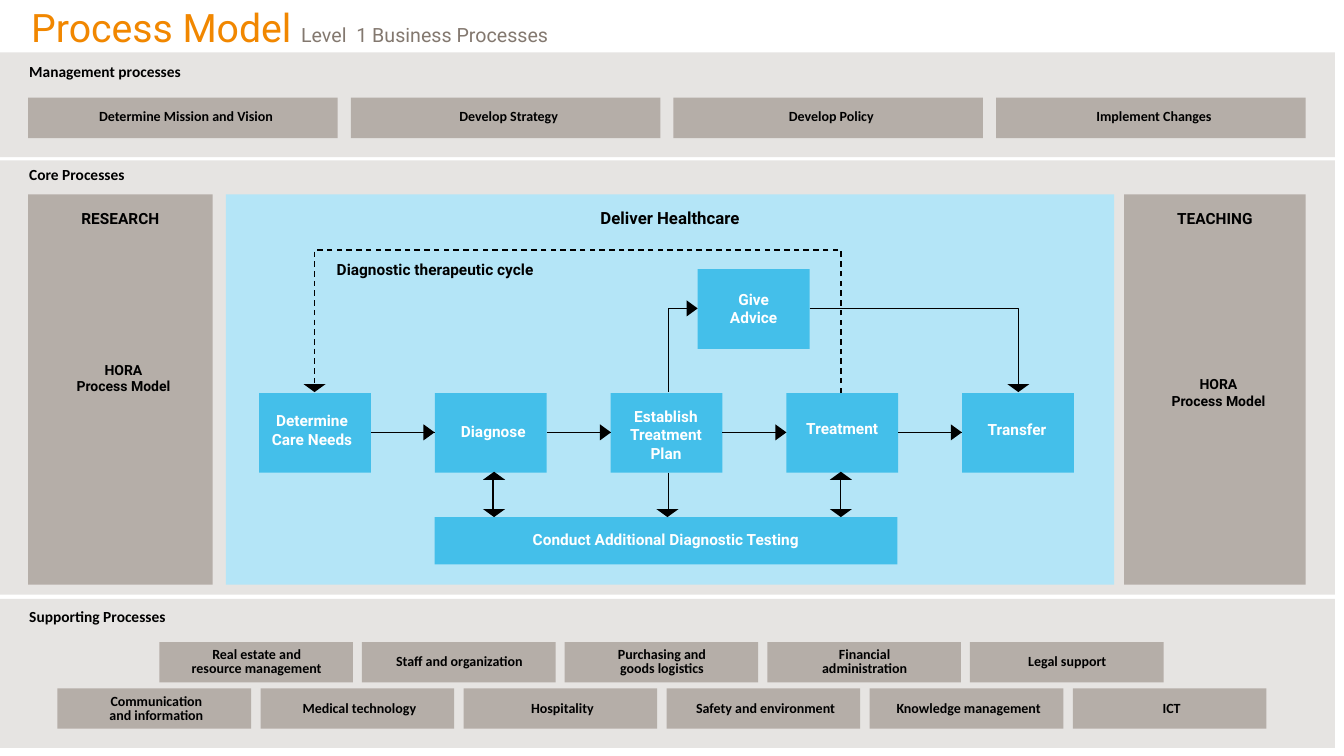
"""Build the Process Model slide: management, core and supporting processes."""
from pptx import Presentation, util as u
from pptx.dml.color import RGBColor
from pptx.enum import dml, shapes, text
from pptx.oxml.ns import qn
from lxml import etree

BLACK = RGBColor(0x00, 0x00, 0x00)
WHITE = RGBColor(0xFF, 0xFF, 0xFF)
ORANGE = RGBColor(0xF1, 0x87, 0x00)
BROWN = RGBColor(0x83, 0x78, 0x6F)
BAND = RGBColor(0xE6, 0xE4, 0xE2)
TAUPE = RGBColor(0xB5, 0xAE, 0xA8)
PALE_BLUE = RGBColor(0xB4, 0xE5, 0xF7)
BLUE = RGBColor(0x44, 0xBF, 0xEA)
LEFT, CENTER = text.PP_ALIGN.LEFT, text.PP_ALIGN.CENTER
TOP, MIDDLE = text.MSO_ANCHOR.TOP, text.MSO_ANCHOR.MIDDLE

deck = Presentation()
deck.slide_width, deck.slide_height = u.Inches(13.33), u.Inches(7.5)
page = deck.slides.add_slide(deck.slide_layouts[5])


def add_box(place, label, fill=None, font="Calibri", size=10, color=BLACK,
            spacing=u.Pt(10), align=CENTER, anchor=MIDDLE, inset=(0, 0)):
    lengths = [u.Inches(value) for value in place]
    if fill is None:
        box = page.shapes.add_textbox(*lengths)
    else:
        box = page.shapes.add_shape(shapes.MSO_SHAPE.RECTANGLE, *lengths)
        box.shadow.inherit = False
        box.fill.solid()
        box.fill.fore_color.rgb = fill
        box.line.fill.background()
    frame = box.text_frame
    frame.word_wrap = True
    frame.vertical_anchor = anchor
    frame.margin_left, frame.margin_top = (u.Inches(max(value, 0)) for value in inset)
    frame.margin_right, frame.margin_bottom = (u.Inches(max(-value, 0)) for value in inset)
    for index, line in enumerate(label.split("\n")):
        para = frame.add_paragraph() if index else frame.paragraphs[0]
        para.alignment = align
        para.line_spacing = spacing
        span = para.add_run()
        span.text = line
        span.font.name, span.font.size, span.font.bold = font, u.Pt(size), True
        span.font.color.rgb = color
    return box


def add_outline(points, closed, width=0.79):
    hundredths = [(round(x * 100), round(y * 100)) for x, y in points]
    builder = page.shapes.build_freeform(*hundredths[0], scale=u.Inches(0.01))
    builder.add_line_segments(hundredths[1:], close=closed)
    outline = builder.convert_to_shape()
    outline.shadow.inherit = False
    if closed:
        outline.fill.solid()
        outline.fill.fore_color.rgb = BLACK
        outline.line.fill.background()
    else:
        outline.fill.background()
        outline.line.color.rgb = BLACK
        outline.line.width = u.Pt(width)
    return outline


title = page.shapes.title
title.left, title.top = u.Inches(0.31), u.Inches(0.05)
title.width, title.height = u.Inches(7.05), u.Inches(0.46)
frame = title.text_frame
frame.auto_size = text.MSO_AUTO_SIZE.NONE
frame.word_wrap = True
frame.vertical_anchor = TOP
frame.margin_left = frame.margin_right = frame.margin_bottom = 0
frame.margin_top = u.Inches(0.02)
para = frame.paragraphs[0]
para.alignment, para.line_spacing = LEFT, 0.93
for words, size, color in [("Process Model ", 28, ORANGE), ("Level", 14, BROWN),
                           (" ", 28, ORANGE), ("1 Business Processes", 14, BROWN)]:
    span = para.add_run()
    span.text = words
    span.font.name, span.font.size = "Roboto", u.Pt(size)
    span.font.color.rgb = color

for top, height, label, drop in [(0.52, 1.04, "Management processes", 0.14),
                                 (1.59, 4.31, "Core Processes", 0.09),
                                 (5.94, 1.48, "Supporting Processes", 0.13)]:
    add_box((0, top, 13.24, height), label, BAND, size=11, align=LEFT,
            anchor=TOP, inset=(0.29, drop))

process_rows = [
    (0.28, 0.97, 3.07, 3.2, (0.06, -0.02),
     ["Determine Mission and Vision", "Develop Strategy", "Develop Policy",
      "Implement Changes"]),
    (1.58, 6.37, 1.92, 2.01, (0.01, 0),
     ["Real estate and\nresource management", "Staff and organization",
      "Purchasing and\ngoods logistics", "Financial\nadministration", "Legal support"]),
    (0.57, 6.83, 1.92, 2.014, (0.04, 0.02),
     ["Communication\nand information", "Medical technology", "Hospitality",
      "Safety and environment", "Knowledge management", "ICT"]),
]
for left, top, width, pitch, inset, labels in process_rows:
    for column, label in enumerate(labels):
        add_box((left + column * pitch, top, width, 0.4), label, TAUPE, inset=inset)

for left, width, label, fill, size in [(0.28, 1.83, "RESEARCH", TAUPE, 11),
                                       (2.24, 8.81, "Deliver Healthcare", PALE_BLUE, 12),
                                       (11.15, 1.8, "TEACHING", TAUPE, 11)]:
    add_box((left, 1.93, width, 3.87), label, fill, "Roboto", size,
            anchor=TOP, inset=(0, 0.19))
for left, top in [(0.36, 3.53), (11.22, 3.67)]:
    add_box((left, top, 1.73, 0.44), "HORA\nProcess Model", font="Roboto", spacing=1.0)
add_box((3.34, 2.53, 3.6, 0.28), "Diagnostic therapeutic cycle", font="Roboto",
        size=11, spacing=u.Pt(13), align=LEFT)

step_places = [(2.57 + 1.743 * column, 3.9, 1.11, 0.79) for column in range(5)]
step_labels = [("Determine\nCare Needs", (-0.06, -0.06)), ("Diagnose", (0.05, -0.02)),
               ("Establish\nTreatment\nPlan", (-0.01, 0.04)),
               ("Treatment", (0, -0.08)), ("Transfer", (-0.02, -0.06))]
places = step_places + [(6.92, 2.67, 1.11, 0.79), (4.31, 5.13, 4.59, 0.47)]
labels = step_labels + [("Give\nAdvice", (0, -0.01)),
                        ("Conduct Additional Diagnostic Testing", (0, -0.02))]
boxes = [add_box(place, label, BLUE, "Roboto", 11, WHITE, u.Pt(13), inset=inset)
         for place, (label, inset) in zip(places, labels)]
steps = boxes[:5]

connectors = []
for before, after in zip(steps, steps[1:]):
    connector = page.shapes.add_connector(shapes.MSO_CONNECTOR.STRAIGHT, 0, 0, 0, 0)
    connector.begin_connect(before, 3)
    connector.end_connect(after, 1)
    connectors.append(connector)
for x in (4.89, 6.63, 8.34):
    connectors.append(page.shapes.add_connector(
        shapes.MSO_CONNECTOR.STRAIGHT, u.Inches(x), u.Inches(4.69),
        u.Inches(x), u.Inches(5.09)))
for connector in connectors:
    connector.line.color.rgb = BLACK
    connector.line.width = u.Pt(0.79)
    etree.SubElement(connector._element.spPr, qn("a:effectLst"))

add_outline([(6.63, 3.89), (6.63, 3.06), (6.83, 3.06)], False)
add_outline([(8.03, 3.06), (10.1, 3.06), (10.1, 3.85)], False)
cycle = add_outline([(8.34, 3.9), (8.34, 2.48), (3.12, 2.48), (3.12, 3.88)], False, 1)
cycle.line.dash_style = dml.MSO_LINE.DASH

right_tips = [(place[0], 4.29) for place in step_places[1:]] + [(6.92, 3.06)]
for x, y in right_tips:
    add_outline([(x, y), (x - 0.11, y - 0.08), (x - 0.11, y + 0.08)], True)
down_tips = [(x, 5.13, -0.08) for x in (4.9, 6.62, 8.34)] + [
    (x, 3.89, -0.08) for x in (3.12, 10.1)]
up_tips = [(x, 4.68, 0.08) for x in (4.9, 8.34)]
for x, y, depth in down_tips + up_tips:
    add_outline([(x, y), (x - 0.11, y + depth), (x + 0.11, y + depth)], True)

deck.save("out.pptx")
